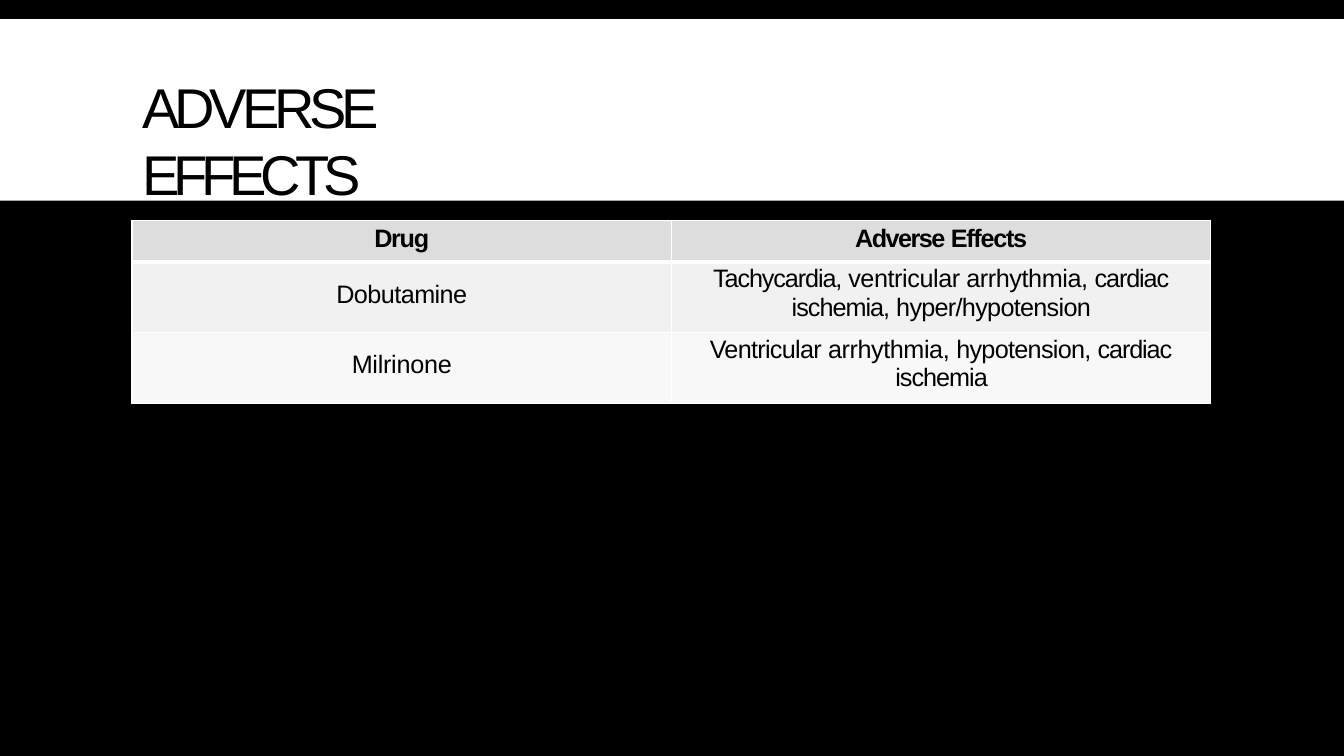
from lxml import etree
from pptx import Presentation
from pptx.dml.color import RGBColor
from pptx.enum.shapes import MSO_SHAPE
from pptx.enum.text import MSO_ANCHOR, PP_ALIGN
from pptx.oxml.ns import qn
from pptx.util import Inches, Pt

RECTANGLE = MSO_SHAPE.RECTANGLE
TOP = MSO_ANCHOR.TOP
CENTER, LEFT = PP_ALIGN.CENTER, PP_ALIGN.LEFT
BLACK = RGBColor(0x00, 0x00, 0x00)
WHITE = RGBColor(0xFF, 0xFF, 0xFF)
ROW_FILLS = [RGBColor(0xDD, 0xDD, 0xDD), RGBColor(0xF1, 0xF1, 0xF1), RGBColor(0xF8, 0xF8, 0xF8)]
FONT = "Arial"

SLIDE_W, SLIDE_H = 13.33, 7.5
BANDS = [(0.19, BLACK), (1.8, WHITE), (5.51, BLACK)]
TITLE = [("ADVERSE ", -3.6), ("EFFECTS", -4.3)]
TITLE_BOX = (1.4, 0.71, 4.55, 0.69)
TABLE_LEFT, TABLE_TOP = 1.31, 2.19
COLUMN_W = 5.35
ROW_HEIGHTS = [0.41, 0.7, 0.7]
HANGING = (2.22, -1.84)
HEADER_RULE, THIN_RULE = 3, 1

# Each cell: top inset, alignment, paragraphs of (space before, [(words, tracking)])
CELLS = [
    [(0.04, CENTER, [(2.6, [("Drug", -0.9)])]),
     (0.04, CENTER, [(2.6, [("Adverse ", -1.1), ("Effects", -0.9)])])],
    [(0.18, CENTER, [(13.2, [("Dobutamine", -0.4)])]),
     (0.03, CENTER, [
         (2.4, [("Tachycardia, ", -0.8), ("ventricular arrhythmia, ", -0.3), ("cardiac", -0.8)]),
         (0.1, [("ischemia, ", -0.7), ("hyper/hypotension", -0.5)])])],
    [(0.18, CENTER, [(13.2, [("Milrinone", -0.2)])]),
     (0.03, LEFT, [
         (2.4, [("Ventricular ", -0.5), ("arrhythmia, ", -0.3), ("hypotension, ", -0.5),
                ("cardiac", -0.8), (" ", 4.2), ("ischemia", -0.7)])])],
]


def write_runs(paragraph, pieces, size, bold=False):
    for words, tracking in pieces:
        run = paragraph.add_run()
        run.text = words
        run.font.name = FONT
        run.font.size = Pt(size)
        run.font.bold = bold
        run.font.color.rgb = BLACK
        run.font._element.set("spc", str(round(tracking * 100)))


def add_borders(cell, widths):
    properties = cell._tc.get_or_add_tcPr()
    for side, width in zip("LRTB", widths):
        line = etree.SubElement(properties, qn(f"a:ln{side}"), w=str(Pt(width)))
        fill = etree.SubElement(line, qn("a:solidFill"))
        etree.SubElement(fill, qn("a:srgbClr"), val=str(WHITE))


def add_bands(slide):
    top = 0
    for height, color in BANDS:
        band = slide.shapes.add_shape(RECTANGLE, 0, Inches(top), Inches(SLIDE_W), Inches(height))
        band.shadow.inherit = False
        band.fill.solid()
        band.fill.fore_color.rgb = color
        band.line.fill.background()
        top += height


def add_title(slide):
    frame = slide.shapes.add_textbox(*map(Inches, TITLE_BOX)).text_frame
    frame.word_wrap = True
    frame.vertical_anchor = TOP
    frame.margin_left = frame.margin_bottom = 0
    frame.margin_top = Inches(0.01)
    frame.margin_right = Inches(0.5)
    heading = frame.paragraphs[0]
    heading.space_before = Pt(0.9)
    heading._p.get_or_add_pPr().set("marL", str(Inches(0.01)))
    write_runs(heading, TITLE, 40)


def fill_cell(cell, row, content):
    inset, alignment, paragraphs = content
    add_borders(cell, (THIN_RULE, THIN_RULE,
                       HEADER_RULE if row == 1 else THIN_RULE,
                       HEADER_RULE if row == 0 else THIN_RULE))
    cell.fill.solid()
    cell.fill.fore_color.rgb = ROW_FILLS[row]
    cell.margin_left = cell.margin_right = cell.margin_bottom = 0
    cell.margin_top = Inches(inset)
    cell.vertical_anchor = TOP
    frame = cell.text_frame
    for index, (space, pieces) in enumerate(paragraphs):
        paragraph = frame.add_paragraph() if index else frame.paragraphs[0]
        paragraph.alignment = alignment
        paragraph.space_before = Pt(space)
        if alignment == LEFT:
            for name, length in zip(("marL", "indent"), HANGING):
                paragraph._p.get_or_add_pPr().set(name, str(Inches(length)))
        write_runs(paragraph, pieces, 18, bold=row == 0)


def add_effects_table(slide):
    columns = len(CELLS[0])
    effects = slide.shapes.add_table(
        len(CELLS), columns, Inches(TABLE_LEFT), Inches(TABLE_TOP),
        Inches(COLUMN_W * columns), Inches(sum(ROW_HEIGHTS))).table
    for column in effects.columns:
        column.width = Inches(COLUMN_W)
    for row, contents in enumerate(CELLS):
        effects.rows[row].height = Inches(ROW_HEIGHTS[row])
        for column, content in enumerate(contents):
            fill_cell(effects.cell(row, column), row, content)


def main():
    """Build the adverse effects slide."""
    deck = Presentation()
    deck.slide_width, deck.slide_height = Inches(SLIDE_W), Inches(SLIDE_H)
    slide = deck.slides.add_slide(deck.slide_layouts[6])
    add_bands(slide)
    add_title(slide)
    add_effects_table(slide)
    deck.save("out.pptx")


if __name__ == "__main__":
    main()
